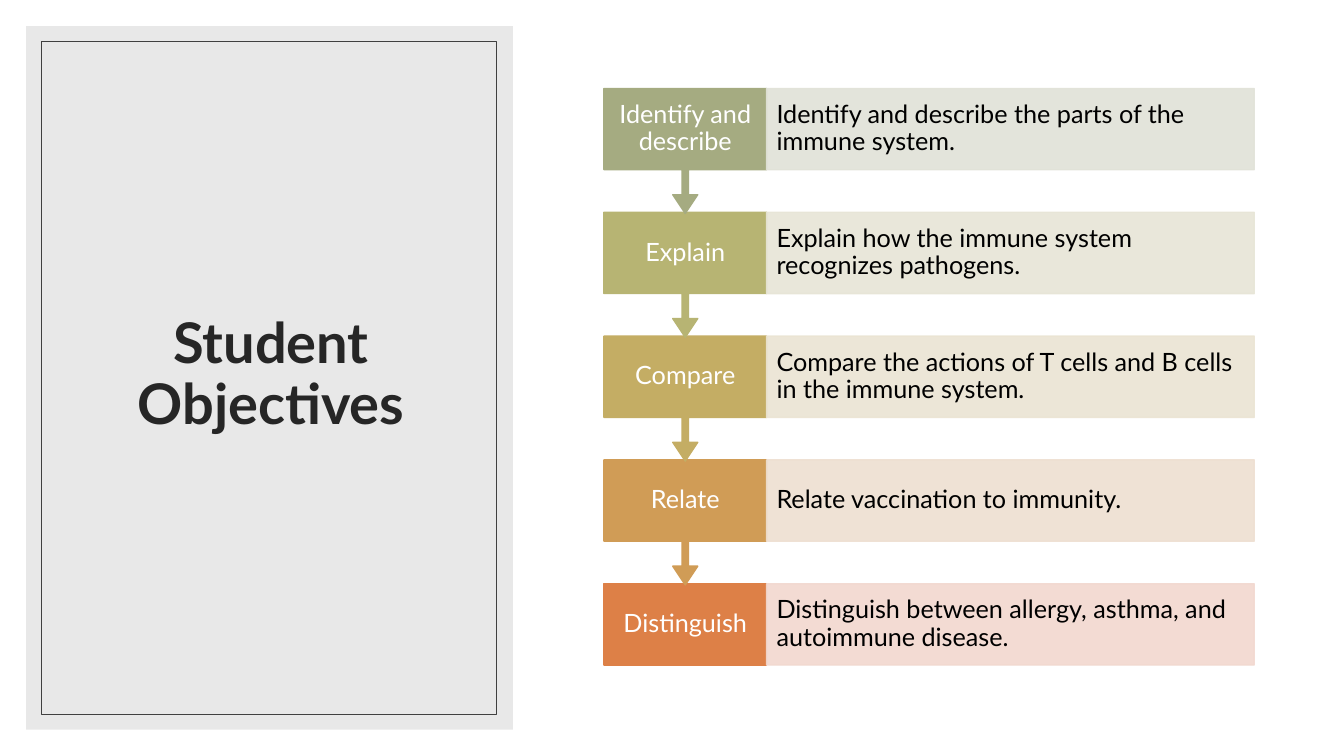
from dataclasses import dataclass

from lxml.etree import SubElement
from pptx import Presentation
from pptx.dml.color import RGBColor
from pptx.enum.shapes import MSO_SHAPE as Preset
from pptx.enum.text import MSO_ANCHOR as Anchor, PP_ALIGN as Align
from pptx.oxml.ns import qn
from pptx.util import Cm, Pt

TITLE = "Student Objectives"
OBJECTIVES = [
    ("Identify and describe", "Identify and describe the parts of the immune system.", "A5AB81", "E1E2D8"),
    ("Explain", "Explain how the immune system recognizes pathogens.", "B7B473", "E7E5D6"),
    ("Compare", "Compare the actions of T cells and B cells in the immune system.", "C4AD64", "EBE4D3"),
    ("Relate", "Relate vaccination to immunity.", "D09C56", "EEDFD1"),
    ("Distinguish", "Distinguish between allergy, asthma, and autoimmune disease.", "DD8047", "F2D8CF"),
]


@dataclass(frozen=True)
class Theme:
    font: str = "Lato"
    title_size: float = 40
    body_size: float = 18
    title: str = "262626"
    label: str = "FFFFFF"
    body: str = "000000"
    panel: str = "D9D9D9"
    frame: str = "404040"
    panel_opacity: int = 60
    body_opacity: int = 90


THEME = Theme()

PANEL = (0.66, 0.66, 12.27, 17.73)
FRAME = (1.04, 1.04, 11.46, 16.97)
TITLE_BOX = (1.6, 1.55, 10.46, 15.85)
LEFT, TOP, ROW_STEP = 15.22, 2.23, 3.12
LABEL_WIDTH, BODY_WIDTH = 4.1, 12.29
ROW_HEIGHT, CALLOUT_HEIGHT = 2.05, 3.15
CALLOUT_ADJUSTMENTS = (0.05, 0.1, 0.15, 0.65)


def paint(color_format, color, opacity):
    color_format.rgb = RGBColor.from_string(color)
    return opacity


def set_opacity(fill_element, opacity):
    color = fill_element.find(qn("a:srgbClr"))
    SubElement(color, qn("a:alpha"), val=str(opacity * 1000))


def add_block(slide, preset, box, fill=None, line=None, line_width=1, opacity=100):
    shape = slide.shapes.add_shape(preset, *map(Cm, box))
    shape.shadow.inherit = False
    for format_, color in ((shape.fill, fill), (shape.line.fill, line)):
        if color is None:
            format_.background()
        else:
            format_.solid()
            format_.fore_color.rgb = RGBColor.from_string(color)
    if line:
        shape.line.width = Pt(line_width)
    if opacity < 100:
        for solid_fill in list(shape.element.spPr.iter(qn("a:solidFill"))):
            set_opacity(solid_fill, opacity)
    return shape


def write_text(shape, text, size, color, align=Align.CENTER, bold=False, inset=0.25):
    frame = shape.text_frame
    frame.word_wrap = True
    frame.vertical_anchor = Anchor.MIDDLE
    frame.margin_left = frame.margin_right = Cm(inset)
    frame.margin_top = frame.margin_bottom = 0
    paragraph = frame.paragraphs[0]
    paragraph.alignment = align
    paragraph.line_spacing = 0.9
    run = paragraph.add_run()
    run.text = text
    run.font.name = THEME.font
    run.font.size = Pt(size)
    run.font.bold = bold
    run.font.color.rgb = RGBColor.from_string(color)


def add_objective(slide, row, label, text, strong, pale):
    top = TOP + row * ROW_STEP
    is_last = row == len(OBJECTIVES) - 1
    preset = Preset.RECTANGLE if is_last else Preset.DOWN_ARROW_CALLOUT
    height = ROW_HEIGHT if is_last else CALLOUT_HEIGHT
    step = add_block(slide, preset, (LEFT, top, LABEL_WIDTH, height), strong, strong)
    if not is_last:
        for index, value in enumerate(CALLOUT_ADJUSTMENTS):
            step.adjustments[index] = value
    write_text(step, label, THEME.body_size, THEME.label, inset=0.28)

    body_box = (LEFT + LABEL_WIDTH, top, BODY_WIDTH, ROW_HEIGHT)
    body = add_block(slide, Preset.RECTANGLE, body_box, pale, pale, opacity=THEME.body_opacity)
    write_text(body, text, THEME.body_size, THEME.body, align=Align.LEFT)


def main():
    presentation = Presentation()
    presentation.slide_width, presentation.slide_height = Cm(33.87), Cm(19.05)
    slide = presentation.slides.add_slide(presentation.slide_layouts[6])

    add_block(slide, Preset.RECTANGLE, PANEL, fill=THEME.panel, opacity=THEME.panel_opacity)
    title = slide.shapes.add_textbox(*map(Cm, TITLE_BOX))
    write_text(title, TITLE, THEME.title_size, THEME.title, bold=True)
    add_block(slide, Preset.RECTANGLE, FRAME, line=THEME.frame, line_width=0.5)

    for row, objective in reversed(list(enumerate(OBJECTIVES))):
        add_objective(slide, row, *objective)

    presentation.save("out.pptx")


if __name__ == "__main__":
    main()
